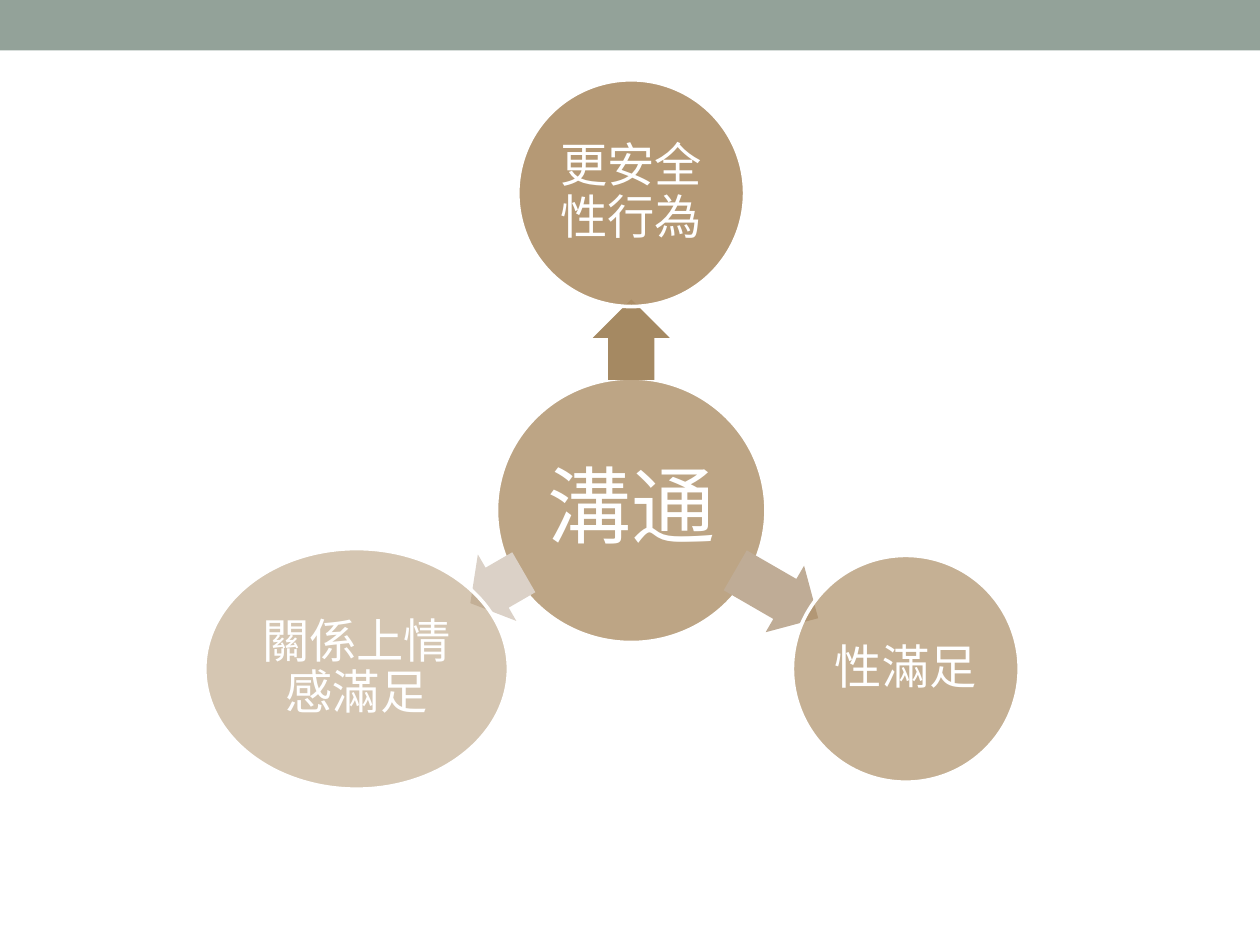
from dataclasses import dataclass
from math import cos, radians, sin

from lxml.etree import SubElement
from pptx import Presentation
from pptx.dml.color import RGBColor
from pptx.enum.shapes import MSO_SHAPE as Shape
from pptx.enum.text import MSO_ANCHOR as Anchor, PP_ALIGN as Align
from pptx.oxml.ns import qn
from pptx.util import Pt


@dataclass(frozen=True)
class Theme:
    font: str = "Arial"
    band: str = "93A299"
    circle: str = "AD8F67"
    white: str = "FFFFFF"
    outline: float = 2.08
    hub_size: int = 48
    outer_size: int = 27


class Diagram:
    def __init__(self, slide, theme, center):
        self.slide = slide
        self.theme = theme
        self.center = center

    def point(self, angle, distance):
        x, y = self.center
        return x + distance * cos(radians(angle)), y + distance * sin(radians(angle))

    def shape(self, kind, center, size, color):
        (x, y), (width, height) = center, size
        shape = self.slide.shapes.add_shape(
            kind, Pt(x - width / 2), Pt(y - height / 2), Pt(width), Pt(height)
        )
        shape.shadow.inherit = False
        shape.fill.solid()
        shape.fill.fore_color.rgb = RGBColor.from_string(color)
        shape.line.fill.background()
        return shape

    def band(self, width, height):
        self.shape(Shape.RECTANGLE, (width / 2, height / 2), (width, height), self.theme.band)

    def circle(self, text, center, size, opacity, font_size, inset):
        shape = self.shape(Shape.OVAL, center, size, self.theme.circle)
        color = shape.fill._xPr.find(qn("a:solidFill"))[0]
        SubElement(color, qn("a:alpha")).set("val", str(opacity * 1000))
        white = RGBColor.from_string(self.theme.white)
        shape.line.color.rgb = white
        shape.line.width = Pt(self.theme.outline)

        frame = shape.text_frame
        frame_format = {"word_wrap": True, "vertical_anchor": Anchor.MIDDLE}
        for side in ("left", "right", "top", "bottom"):
            frame_format[f"margin_{side}"] = Pt(inset)
        paragraph = frame.paragraphs[0]
        run = paragraph.add_run()
        run.text = text
        run.font.color.rgb = white
        formats = (
            (frame, frame_format),
            (paragraph, {"alignment": Align.CENTER, "line_spacing": 0.9}),
            (run.font, {"name": self.theme.font, "size": Pt(font_size)}),
        )
        for target, values in formats:
            for name, value in values.items():
                setattr(target, name, value)

    def arrow(self, angle, distance, length, color):
        shape = self.shape(Shape.RIGHT_ARROW, self.point(angle, distance), (length, 43.9), color)
        shape.adjustments[0] = 0.6
        shape.adjustments[1] = 0.5
        shape.rotation = angle


def main():
    presentation = Presentation()
    presentation.slide_width = Pt(720)
    presentation.slide_height = Pt(540)
    slide = presentation.slides.add_slide(presentation.slide_layouts[6])
    theme = Theme()
    diagram = Diagram(slide, theme, center=(360.7, 291.6))

    diagram.band(720, 28.8)
    diagram.circle("溝通", diagram.center, (154, 151.2), 80, theme.hub_size, 5)

    spokes = (
        ("更安全性行為", 270, (129.6, 129.6), 90, 97.5, 46, "A58962"),
        ("性滿足", 30, (129.6, 129.6), 70, 96, 54.7, "BFAC96"),
        ("關係上情感滿足", 150, (173.5, 137.5), 50, 88.5, 35.3, "DBD1C7"),
    )
    for text, angle, size, opacity, distance, length, color in spokes:
        diagram.arrow(angle, distance, length, color)
        diagram.circle(text, diagram.point(angle, 181.2), size, opacity, theme.outer_size, 2.9)

    presentation.save("out.pptx")


if __name__ == "__main__":
    main()
